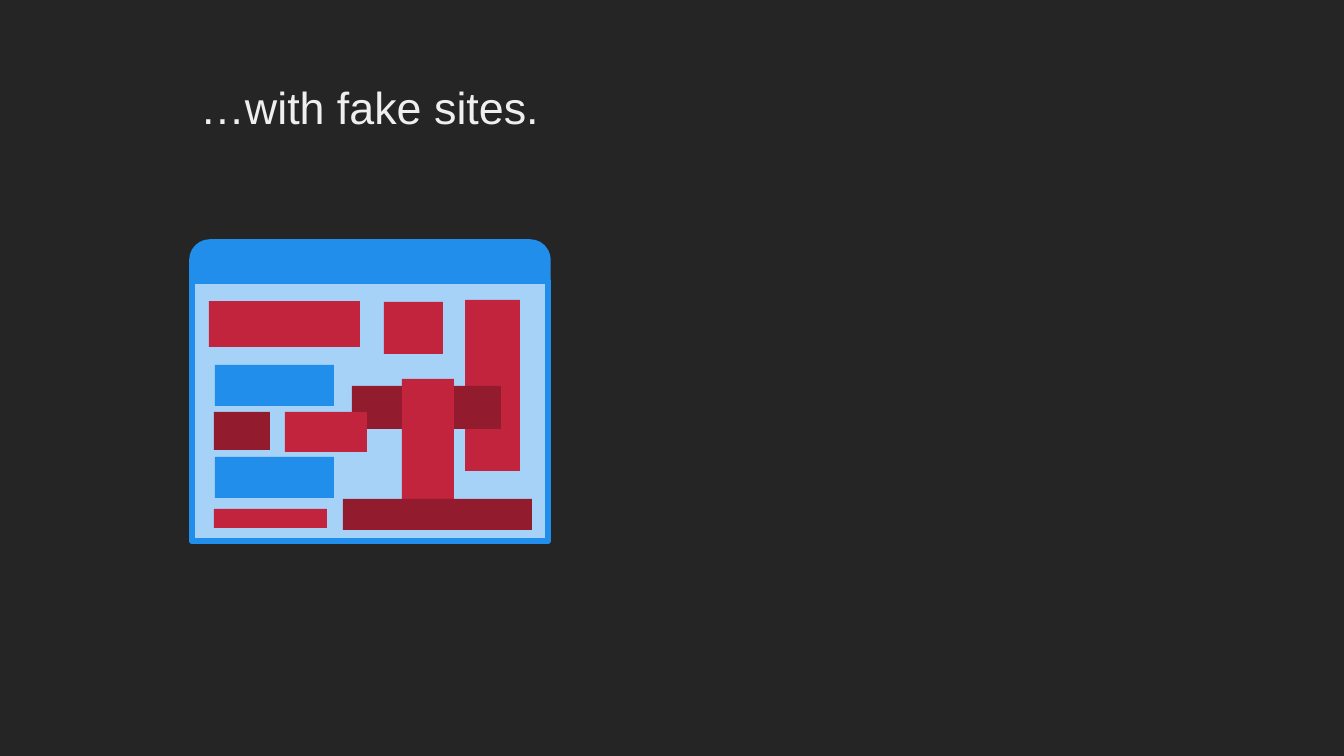
from pptx import Presentation, util as u
from pptx.dml.color import RGBColor
from pptx.enum import shapes, text

WIDTH, HEIGHT = 1344, 756
SCALE = u.Inches(10) / WIDTH
DARK, PALE, BLUE = "252525", "A6D2F7", "218EEC"
RED, WINE, WHITE = "C2243D", "921B2E", "EFEFEF"
BLOCKS = [
    (209, 301, 151, 46, RED),
    (384, 302, 59, 52, RED),
    (465, 300, 55, 171, RED),
    (352, 386, 149, 43, WINE),
    (215, 365, 119, 41, BLUE),
    (215, 457, 119, 41, BLUE),
    (214, 412, 56, 38, WINE),
    (285, 412, 82, 40, RED),
    (402, 379, 52, 133, RED),
    (343, 499, 189, 31, WINE),
    (214, 509, 113, 19, RED),
]


def px(n):
    return u.Emu(round(n * SCALE))


def paint(fill, tone):
    fill.solid()
    fill.fore_color.rgb = RGBColor.from_string(tone)


def add_text(slide, words, box, size, tone, font="Arial"):
    frame = slide.shapes.add_textbox(*map(px, box)).text_frame
    frame.word_wrap = False
    frame.auto_size = text.MSO_AUTO_SIZE.SHAPE_TO_FIT_TEXT
    frame.margin_left = frame.margin_right = px(9)
    frame.margin_top = frame.margin_bottom = px(5)
    para = frame.paragraphs[0]
    para.alignment = text.PP_ALIGN.CENTER
    run = para.add_run()
    run.text = words
    run.font.name = font
    run.font.size = u.Pt(size)
    run.font.color.rgb = RGBColor.from_string(tone)


def add_block(slide, kind, box, tone):
    block = slide.shapes.add_shape(kind, *map(px, box))
    block.shadow.inherit = False
    paint(block.fill, tone)
    block.line.fill.background()
    return block


def add_pane(slide, box, tone, curve):
    kind = shapes.MSO_SHAPE.ROUND_2_SAME_RECTANGLE
    pane = add_block(slide, kind, box, tone)
    pane.adjustments[0] = curve
    pane.adjustments[1] = 0
    paint(pane.line.fill, BLUE)
    pane.line.width = u.Pt(3)


def main():
    deck = Presentation()
    deck.slide_width, deck.slide_height = px(WIDTH), px(HEIGHT)
    slide = deck.slides.add_slide(deck.slide_layouts[6])
    paint(slide.background.fill, DARK)
    add_text(slide, "…with fake sites.", (188, 75, 363, 65), 24, WHITE)
    add_pane(slide, (192, 242, 356, 299), BLUE, 0.06)
    add_pane(slide, (192, 281, 356, 260), PALE, 0)
    for *box, tone in BLOCKS:
        add_block(slide, shapes.MSO_SHAPE.RECTANGLE, box, tone)
    deck.save("out.pptx")


if __name__ == "__main__":
    main()
